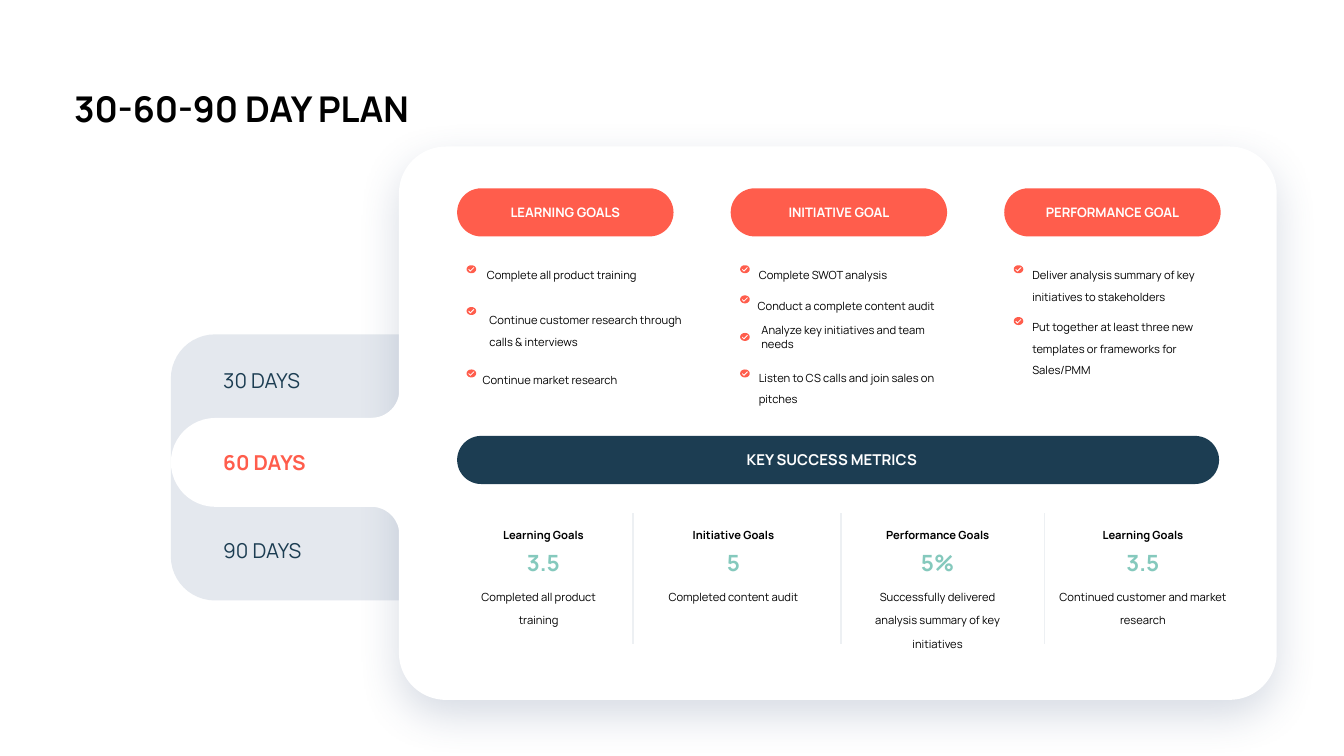
from dataclasses import dataclass
from math import cos, pi, sin

from lxml.etree import SubElement
from pptx import Presentation
from pptx.dml.color import RGBColor
from pptx.enum.shapes import MSO_CONNECTOR, MSO_SHAPE
from pptx.enum.text import MSO_ANCHOR, MSO_AUTO_SIZE, PP_ALIGN
from pptx.oxml.ns import qn
from pptx.util import Cm, Pt

FONT = "Manrope"
COLORS = {
    "coral": "FF5D4C", "navy": "1C3D52", "mint": "85C9BD", "panel": "E4E8EE",
    "divider": "EDF0F3", "shadow": "475D84", "white": "FFFFFF", "black": "000000",
}
COLUMN_LEFT, COLUMN_STEP = 8.64, 5.17
TAB_LEFT, TAB_RIGHT = 3.23, 7.55
ACTIVE_TOP, ACTIVE_BOTTOM = 7.9, 9.58
FILLET = 0.53
CHECK_MARK = [(-0.02, 0.05), (-0.06, 0.01), (-0.05, -0.01),
              (-0.02, 0.02), (0.04, -0.04), (0.06, -0.03)]


@dataclass
class Goal:
    text: str
    check_y: float
    indent: float = 0.05
    space_before: float = 0
    line_spacing: float = 1.62


@dataclass
class GoalColumn:
    heading: str
    placeholder: int
    width: float
    goals: list[Goal]


@dataclass
class Metric:
    heading: str
    value: str
    caption: str
    center: float
    caption_width: float = 3.15
    caption_shift: float = 0


@dataclass
class Tab:
    text: str
    top: float
    color: str = "navy"
    bold: bool = False


GOAL_COLUMNS = [
    GoalColumn("LEARNING GOALS", 1, 4.27, [
        Goal("Complete all product training", 5.09, 0.08),
        Goal("Continue customer research through calls & interviews", 5.88, 0.13, 12.3),
        Goal("Continue market research", 7.06, 0, 8.6),
    ]),
    GoalColumn("INITIATIVE GOAL", 2, 4.06, [
        Goal("Complete SWOT analysis", 5.09),
        Goal("Conduct a complete content audit", 5.66, 0.03, 4.8),
        Goal("Analyze key initiatives and team needs", 6.37, 0.1, 5.9, 1.0),
        Goal("Listen to CS calls and join sales on pitches", 7.06, 0.05, 6.4),
    ]),
    GoalColumn("PERFORMANCE GOAL", 3, 4.06, [
        Goal("Deliver analysis summary of key initiatives to stakeholders", 5.09),
        Goal("Put together at least three new templates or frameworks for Sales/PMM",
             6.07, 0.05, 4.3),
    ]),
]
METRICS = [
    Metric("Learning Goals", "3.5", "Completed all product training", 10.27, 3.25, -0.09),
    Metric("Initiative Goals", "5", "Completed content audit", 13.86),
    Metric("Performance Goals", "5%",
           "Successfully delivered analysis summary of key initiatives", 17.72),
    Metric("Learning Goals", "3.5", "Continued customer and market research", 21.6, 3.66),
]
TABS = [Tab("30 DAYS", 6.86), Tab("60 DAYS", 8.41, "coral", True), Tab("90 DAYS", 10.08)]


def rgb(name: str) -> RGBColor:
    return RGBColor.from_string(COLORS[name])


def paint(shape, color: str) -> None:
    shape.fill.solid()
    shape.fill.fore_color.rgb = rgb(color)
    shape.line.fill.background()
    shape.shadow.inherit = False


def format_paragraph(paragraph, size: float, color: str = "black", bold: bool = False,
                     align=PP_ALIGN.LEFT, spacing: float = 1.0) -> None:
    paragraph.alignment = align
    paragraph.line_spacing = spacing
    paragraph.font.name = FONT
    paragraph.font.size = Pt(size)
    paragraph.font.bold = bold
    paragraph.font.color.rgb = rgb(color)


def prepare_frame(frame, anchor=MSO_ANCHOR.TOP, side: float = 0.18, edge: float = 0.09) -> None:
    frame.word_wrap = True
    frame.auto_size = MSO_AUTO_SIZE.NONE
    frame.vertical_anchor = anchor
    frame.margin_left = frame.margin_right = Cm(side)
    frame.margin_top = frame.margin_bottom = Cm(edge)


def place(shape, left: float, top: float, width: float, height: float) -> None:
    shape.left, shape.top, shape.width, shape.height = map(Cm, (left, top, width, height))


def add_text(slide, text: str, left: float, top: float, width: float, height: float,
             size: float, **style) -> None:
    frame = slide.shapes.add_textbox(*map(Cm, (left, top, width, height))).text_frame
    prepare_frame(frame)
    frame.text = text
    format_paragraph(frame.paragraphs[0], size, **style)


def add_rounded(slide, left: float, top: float, width: float, height: float,
                color: str, rounding: float):
    shape = slide.shapes.add_shape(MSO_SHAPE.ROUNDED_RECTANGLE,
                                   *map(Cm, (left, top, width, height)))
    shape.adjustments[0] = rounding
    paint(shape, color)
    return shape


def add_pill(slide, text: str, left: float, top: float, width: float, color: str,
             size: float, right_margin: float = 0.1) -> None:
    frame = add_rounded(slide, left, top, width, 0.91, color, 0.5).text_frame
    prepare_frame(frame, MSO_ANCHOR.MIDDLE, 0.1, 0)
    frame.margin_right = Cm(right_margin)
    frame.text = text
    format_paragraph(frame.paragraphs[0], size, "white", True, PP_ALIGN.CENTER)


def add_left_rounded(slide, top: float, height: float, color: str, rounding: float) -> None:
    """Draw a tab block whose left corners are round: a top-rounded shape turned left."""
    width = TAB_RIGHT - TAB_LEFT
    left, upper = TAB_LEFT + (width - height) / 2, top + (height - width) / 2
    shape = slide.shapes.add_shape(MSO_SHAPE.ROUND_2_SAME_RECTANGLE,
                                   *map(Cm, (left, upper, height, width)))
    shape.adjustments[0], shape.adjustments[1] = rounding, 0
    shape.rotation = 270
    paint(shape, color)


def add_outline(slide, contours: list[list[tuple[float, float]]], color: str) -> None:
    first, *others = [[(Cm(x), Cm(y)) for x, y in contour] for contour in contours]
    builder = slide.shapes.build_freeform(*first[0])
    builder.add_line_segments(first[1:])
    for contour in others:
        builder.move_to(*contour[0])
        builder.add_line_segments(contour[1:])
    paint(builder.convert_to_shape(), color)


def add_fillet(slide, corner_y: float, direction: int) -> None:
    """Fill the hollow corner beside the active tab; direction is -1 above, 1 below."""
    angles = [pi / 2 * step / 12 for step in range(13)]
    arc = [(TAB_RIGHT - FILLET + FILLET * sin(angle),
            corner_y + direction * FILLET * (1 - cos(angle))) for angle in angles]
    add_outline(slide, [[(TAB_RIGHT, corner_y), *arc]], "white")


def add_check(slide, center_x: float, center_y: float) -> None:
    angles = [2 * pi * step / 32 for step in range(32)]
    disc = [(center_x + 0.09 * cos(angle), center_y + 0.075 * sin(angle)) for angle in angles]
    mark = [(center_x + x, center_y + y) for x, y in CHECK_MARK]
    add_outline(slide, [disc, mark], "coral")


def add_card(slide) -> None:
    card = add_rounded(slide, 7.54, 2.77, 16.59, 10.46, "white", 0.085)
    effects = card._element.spPr.find(qn("a:effectLst"))
    shadow = SubElement(effects, qn("a:outerShdw"), blurRad=str(Pt(23)), dist=str(Pt(8.7)),
                        dir="5400000", algn="t", rotWithShape="0")
    color = SubElement(shadow, qn("a:srgbClr"), val=COLORS["shadow"])
    SubElement(color, qn("a:alpha"), val="22000")


def add_goal_column(slide, column: GoalColumn, left: float) -> None:
    add_pill(slide, column.heading, left, 3.56, 4.09, "coral", 7)
    body = slide.placeholders[column.placeholder]
    place(body, left + 0.3, 4.83, column.width, 3.1)
    frame = body.text_frame
    prepare_frame(frame)
    for index, goal in enumerate(column.goals):
        paragraph = frame.paragraphs[0] if index == 0 else frame.add_paragraph()
        paragraph.text = goal.text
        properties = paragraph._p.get_or_add_pPr()
        properties.set("marL", str(Cm(goal.indent)))
        properties.set("indent", "0")
        SubElement(properties, qn("a:buNone"))
        format_paragraph(paragraph, 6, spacing=goal.line_spacing)
        paragraph.space_before = Pt(goal.space_before)
        add_check(slide, left + 0.27, goal.check_y)


def add_metric(slide, metric: Metric) -> None:
    center, caption_left = metric.center, metric.center + metric.caption_shift
    caption_left -= metric.caption_width / 2
    add_text(slide, metric.heading, center - 1.3, 9.55, 2.6, 0.64, 6,
             bold=True, align=PP_ALIGN.CENTER, spacing=2.38)
    add_text(slide, metric.caption, caption_left, 10.87, metric.caption_width, 1.65, 6,
             align=PP_ALIGN.CENTER, spacing=1.75)
    add_text(slide, metric.value, center - 0.66, 10.19, 1.32, 0.71, 12,
             color="mint", bold=True, align=PP_ALIGN.CENTER, spacing=1.19)


def add_divider(slide, x: float) -> None:
    line = slide.shapes.add_connector(MSO_CONNECTOR.STRAIGHT, *map(Cm, (x, 9.7, x, 12.17)))
    line.line.color.rgb = rgb("divider")
    line.line.width = Pt(1)
    SubElement(line._element.spPr, qn("a:effectLst"))


def main() -> None:
    presentation = Presentation()
    presentation.slide_width, presentation.slide_height = Cm(25.4), Cm(14.29)
    slide = presentation.slides.add_slide(presentation.slide_layouts.get_by_name("Comparison"))
    spare = slide.placeholders[4]._element
    spare.getparent().remove(spare)

    add_left_rounded(slide, 6.32, 5.03, "panel", 0.193)
    add_card(slide)
    # Placeholders come first in the tree; lift the background blocks beneath them.
    tree = slide.shapes._spTree
    for position, block in enumerate(list(slide.shapes)[-2:]):
        tree.insert(2 + position, block._element)

    title = slide.shapes.title
    place(title, 1.22, 1.27, 7.39, 1.07)
    prepare_frame(title.text_frame)
    title.text_frame.text = "30-60-90 DAY PLAN"
    format_paragraph(title.text_frame.paragraphs[0], 19, bold=True, spacing=1.36)

    for index, column in enumerate(GOAL_COLUMNS):
        add_goal_column(slide, column, COLUMN_LEFT + index * COLUMN_STEP)
    add_pill(slide, "KEY SUCCESS METRICS", COLUMN_LEFT, 8.24, 14.4, "navy", 8, 0.33)
    for x in (11.96, 15.9, 19.74):
        add_divider(slide, x)
    for metric in METRICS:
        add_metric(slide, metric)

    add_fillet(slide, ACTIVE_TOP, -1)
    add_left_rounded(slide, ACTIVE_TOP, ACTIVE_BOTTOM - ACTIVE_TOP, "white", 0.5)
    add_fillet(slide, ACTIVE_BOTTOM, 1)
    for tab in TABS:
        add_text(slide, tab.text, 4.04, tab.top, 3.53, 0.64, 11, color=tab.color, bold=tab.bold)
    presentation.save("out.pptx")


if __name__ == "__main__":
    main()
